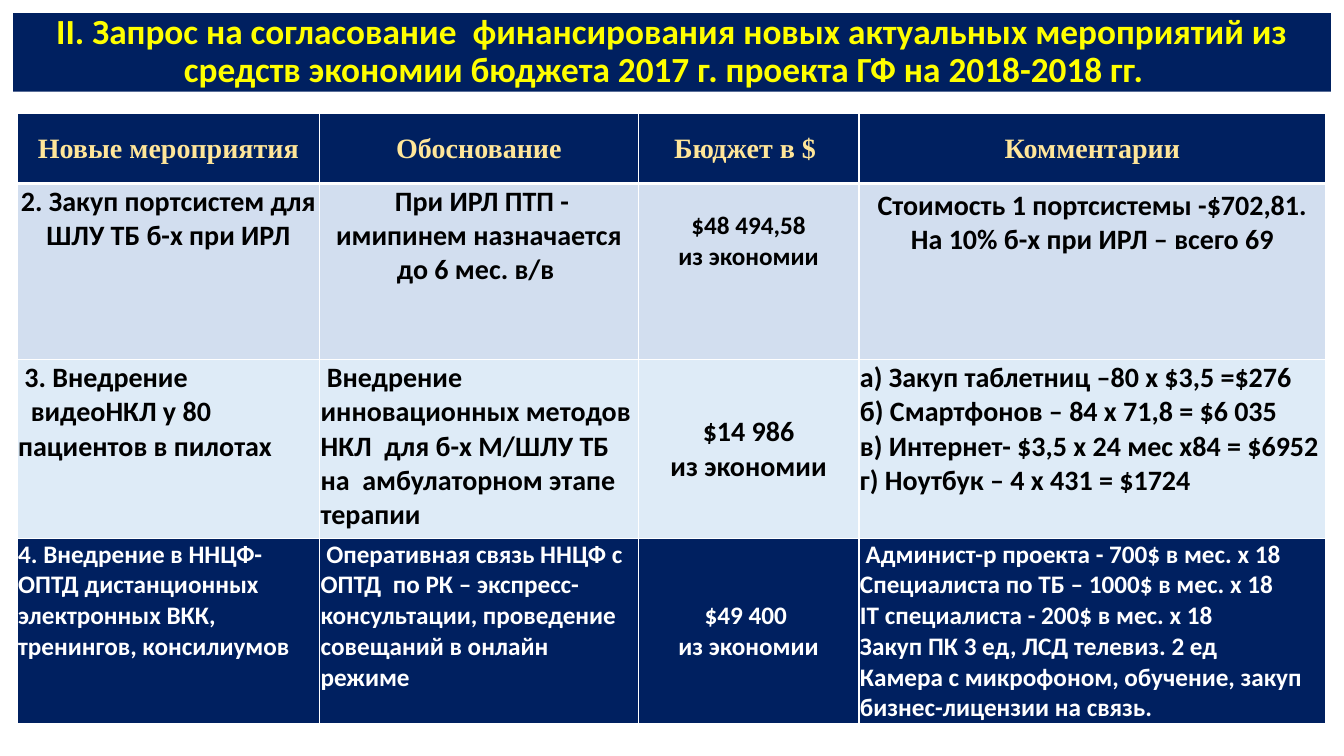
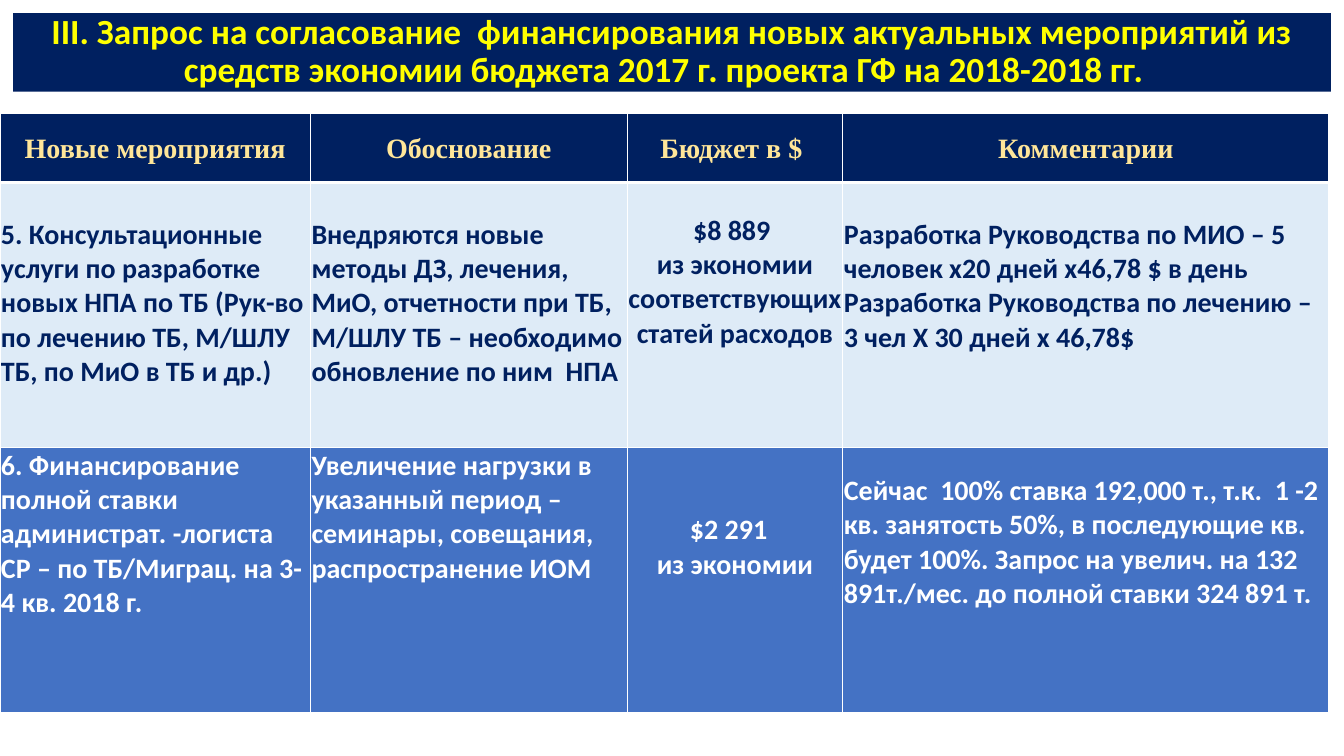
import dataclasses
import typing

import lxml.etree
import pptx
import pptx.dml.color
import pptx.enum.text
import pptx.oxml.ns
import pptx.util

Inches = pptx.util.Inches
Pt = pptx.util.Pt
RGB = pptx.dml.color.RGBColor
ALIGN = pptx.enum.text.PP_ALIGN
ANCHOR = pptx.enum.text.MSO_ANCHOR

NAVY = RGB(0x00, 0x20, 0x60)
BLUE = RGB(0x44, 0x72, 0xC4)
MIST = RGB(0xD2, 0xDE, 0xEF)
PALE = RGB(0xDE, 0xEB, 0xF7)
YELLOW = RGB(0xFF, 0xFF, 0x00)
SAND = RGB(0xFF, 0xE6, 0x99)
WHITE = RGB(0xFF, 0xFF, 0xFF)
BLACK = RGB(0x00, 0x00, 0x00)

BODY_FONT = "Calibri"
HEADER_FONT = "Times New Roman"
INSET = 0.01
TABLE_TOP = 1.13
TITLE = (
    "{}. Запрос на согласование  финансирования новых актуальных мероприятий "
    "из средств экономии бюджета 2017 г. проекта ГФ на 2018-2018 гг.  "
)
HEADERS = ("Новые мероприятия", "Обоснование", "Бюджет в $ ", "Комментарии")


@dataclasses.dataclass(frozen=True)
class Cell:
    """Text of a cell; top is its upper inset, None centres it vertically."""
    text: str
    top: typing.Optional[float] = INSET
    centred: bool = False
    size: float = 20


@dataclasses.dataclass(frozen=True)
class Row:
    height: float
    fill: RGB
    color: RGB
    cells: tuple[Cell, ...]
    font: str = BODY_FONT


@dataclasses.dataclass(frozen=True)
class RequestSlide:
    number: str
    left: float
    columns: tuple[float, ...]
    header_height: float
    rows: tuple[Row, ...]


SLIDES = (
    RequestSlide("II", 0.17, (3, 3.16, 2.19, 4.63), 0.69, (
        Row(1.75, MIST, BLACK, (
            Cell("2. Закуп портсистем для ШЛУ ТБ б-х при ИРЛ", centred=True),
            Cell(" При ИРЛ ПТП - имипинем назначается до 6 мес. в/в ", centred=True),
            Cell("$48 494,58\nиз экономии", 0.27, True, 18),
            Cell("Стоимость 1 портсистемы -$702,81. На 10% б-х при ИРЛ – всего 69",
                 0.05, True),
        )),
        Row(1.77, PALE, BLACK, (
            Cell(" 3. Внедрение\n  видеоНКЛ у 80 пациентов в пилотах"),
            Cell(" Внедрение инновационных методов НКЛ  для б-х М/ШЛУ ТБ "
                 "на  амбулаторном этапе терапии"),
            Cell("$14 986\nиз экономии", None, True),
            Cell("а) Закуп таблетниц –80 х $3,5 =$276\n"
                 "б) Смартфонов – 84 х 71,8 = $6 035\n"
                 "в) Интернет- $3,5 х 24 мес х84 = $6952\n"
                 "г) Ноутбук – 4 х 431 = $1724"),
        )),
        Row(1.83, NAVY, WHITE, (
            Cell("4. Внедрение в ННЦФ-ОПТД дистанционных электронных ВКК,  "
                 "тренингов, консилиумов", size=18),
            Cell(" Оперативная связь ННЦФ с ОПТД  по РК – экспресс-консультации, "
                 "проведение совещаний в онлайн режиме", size=18),
            Cell("$49 400 \nиз экономии", None, True, 18),
            Cell(" Админист-р проекта - 700$ в мес. х 18\n"
                 "Специалиста по ТБ – 1000$ в мес. х 18\n"
                 "IT специалиста - 200$ в мес. х 18\n"
                 "Закуп ПК 3 ед, ЛСД телевиз. 2 ед\n"
                 "Камера с микрофоном, обучение, закуп бизнес-лицензии на связь.",
                 size=18),
        )),
    )),
    RequestSlide("III", 0, (3.08, 3.14, 2.14, 4.82), 0.68, (
        Row(2.63, PALE, NAVY, (
            Cell("5. Консультационные услуги по разработке новых НПА по ТБ "
                 "(Рук-во по лечению ТБ, М/ШЛУ ТБ, по МиО в ТБ и др.)", 0.35),
            Cell("Внедряются новые методы ДЗ, лечения, МиО, отчетности при ТБ, "
                 "М/ШЛУ ТБ – необходимо обновление по ним  НПА", 0.35),
            Cell("$8 889 \nиз экономии\nсоответствующих статей расходов", 0.31, True),
            Cell("Разработка Руководства по МИО – 5 человек х20 дней "
                 "х46,78 $ в день\n"
                 "Разработка Руководства по лечению – 3 чел Х 30 дней х 46,78$", 0.35),
        )),
        Row(2.63, BLUE, WHITE, (
            Cell("6. Финансирование полной ставки администрат. -логиста СР "
                 "– по ТБ/Миграц. на 3-4 кв. 2018 г."),
            Cell("Увеличение нагрузки в указанный период – семинары, совещания, "
                 "распространение ИОМ"),
            Cell("$2 291  \nиз экономии", 0.65, True),
            Cell("Сейчас  100% ставка 192,000 т., т.к.  1 -2 кв. занятость 50%, "
                 "в последующие кв. будет 100%. Запрос на увелич. на 132 891т./мес. "
                 "до полной ставки 324 891 т.", 0.26),
        )),
    )),
)


def format_text(tf, font: str, size: float, color: RGB, align) -> None:
    for p in tf.paragraphs:
        p.alignment = align
        for r in p.runs:
            r.font.name = font
            r.font.size = Pt(size)
            r.font.bold = True
            r.font.color.rgb = color


def add_borders(cell, top: float, bottom: float) -> None:
    """Draw white borders; must run before the cell's fill is set."""
    qn = pptx.oxml.ns.qn
    tc_pr = cell._tc.get_or_add_tcPr()
    for side, width in (("L", 1), ("R", 1), ("T", top), ("B", bottom)):
        ln = lxml.etree.SubElement(tc_pr, qn(f"a:ln{side}"), w=str(Pt(width)))
        fill = lxml.etree.SubElement(ln, qn("a:solidFill"))
        lxml.etree.SubElement(fill, qn("a:srgbClr"), val=str(WHITE))


def add_title(s, number: str) -> None:
    sp = s.shapes.title
    sp.left, sp.top, sp.width, sp.height = map(Inches, (0.13, 0.13, 13.07, 0.78))
    sp.fill.solid()
    sp.fill.fore_color.rgb = NAVY
    tf = sp.text_frame
    tf.text = TITLE.format(number)
    tf.auto_size = pptx.enum.text.MSO_AUTO_SIZE.NONE
    tf.word_wrap = True
    tf.vertical_anchor = ANCHOR.MIDDLE
    tf.paragraphs[0].line_spacing = 0.9
    format_text(tf, BODY_FONT, 25.2, YELLOW, ALIGN.CENTER)


def fill_cell(cell, content: Cell, row: Row) -> None:
    cell.margin_left = cell.margin_right = Inches(INSET)
    cell.margin_top = Inches(INSET if content.top is None else content.top)
    cell.margin_bottom = 0
    cell.vertical_anchor = ANCHOR.MIDDLE if content.top is None else ANCHOR.TOP
    cell.fill.solid()
    cell.fill.fore_color.rgb = row.fill
    cell.text_frame.text = content.text
    align = ALIGN.CENTER if content.centred else ALIGN.LEFT
    format_text(cell.text_frame, row.font, content.size, row.color, align)


def add_request_table(s, request: RequestSlide) -> None:
    header_cells = tuple(Cell(text, None, True) for text in HEADERS)
    header = Row(request.header_height, NAVY, SAND, header_cells, HEADER_FONT)
    rows = (header, *request.rows)
    table = s.shapes.add_table(
        len(rows), len(request.columns), Inches(request.left), Inches(TABLE_TOP),
        Inches(sum(request.columns)), Inches(sum(row.height for row in rows)),
    ).table
    for column, width in zip(table.columns, request.columns):
        column.width = Inches(width)
    for i, row in enumerate(rows):
        table.rows[i].height = Inches(row.height)
        for j, content in enumerate(row.cells):
            cell = table.cell(i, j)
            add_borders(cell, top=3 if i == 1 else 1, bottom=3 if i == 0 else 1)
            fill_cell(cell, content, row)


def main() -> None:
    prs = pptx.Presentation()
    prs.slide_width, prs.slide_height = Inches(13.33), Inches(7.5)
    title_only = prs.slide_layouts.get_by_name("Title Only")
    for request in SLIDES:
        s = prs.slides.add_slide(title_only)
        add_title(s, request.number)
        add_request_table(s, request)
    prs.save("out.pptx")


if __name__ == "__main__":
    main()
